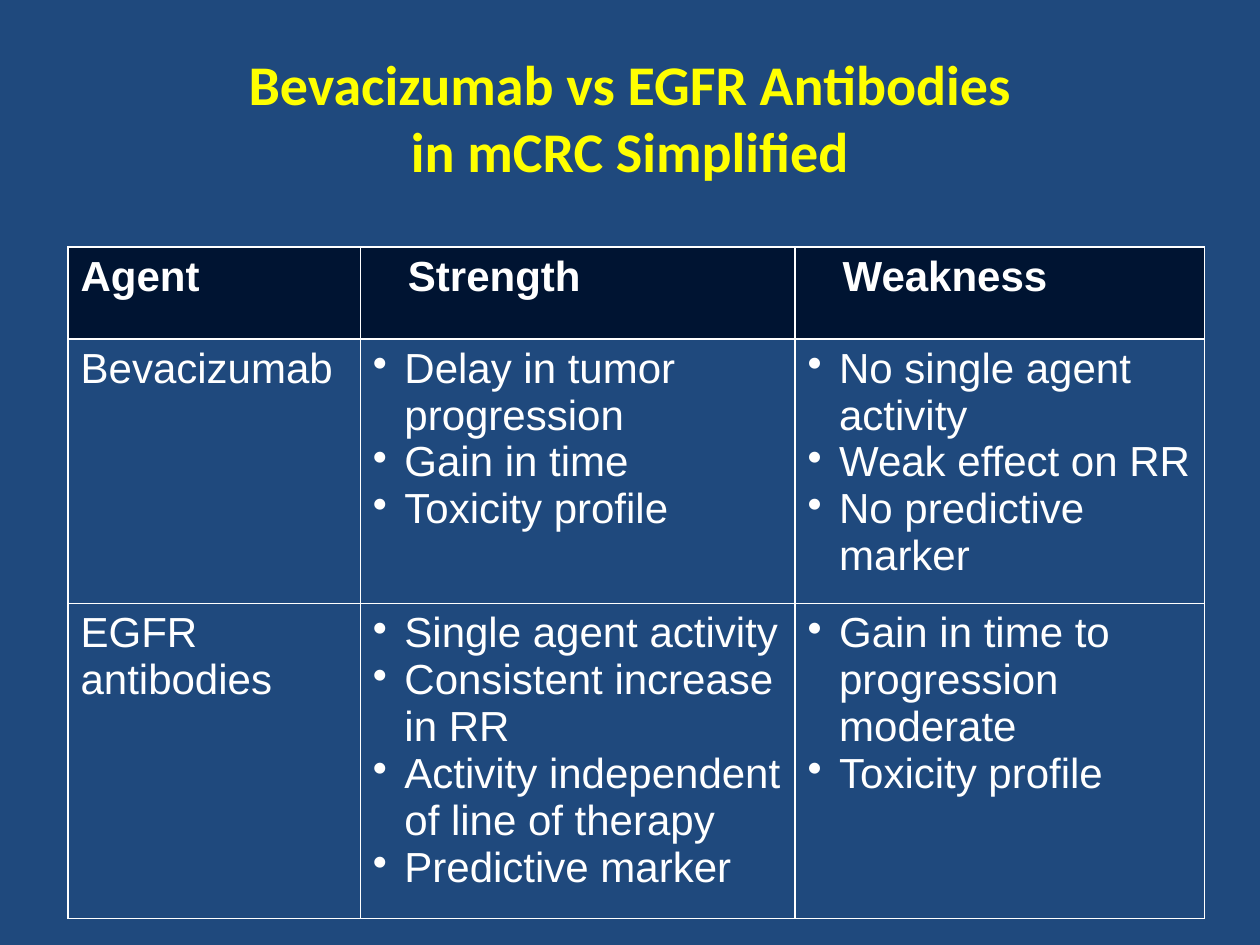
"""Build the slide that compares bevacizumab with EGFR antibodies."""
from dataclasses import dataclass

from lxml.etree import SubElement
from pptx import Presentation
from pptx.dml.color import RGBColor
from pptx.enum.text import MSO_ANCHOR, PP_ALIGN
from pptx.oxml.ns import qn
from pptx.util import Inches, Pt


@dataclass(frozen=True)
class Theme:
    """Colours, fonts and sizes of the deck."""
    back: str = "1F497D"
    head: str = "001432"
    title: str = "FFFF00"
    text: str = "FFFFFF"
    title_font: str = "Calibri"
    body_font: str = "Arial"
    title_size: int = 32
    body_size: int = 24
    rule: int = 1
    indent: float = 2.5
    head_indent: float = 2.78


class Page:
    """One slide on a grid of 100 columns by 75 rows."""

    def __init__(self, deck, theme):
        """Add a blank slide with the theme's background."""
        self.theme = theme
        self.unit = deck.slide_width / 100
        self.slide = deck.slides.add_slide(deck.slide_layouts[6])
        fill = self.slide.background.fill
        fill.solid()
        fill.fore_color.rgb = RGBColor.from_string(theme.back)

    def span(self, *cells):
        """Turn grid lengths into slide lengths."""
        return [round(n * self.unit) for n in cells]

    def style(self, para, font, size, color, bold):
        """Set the font of a paragraph."""
        para.font.name = font
        para.font.size = Pt(size)
        para.font.bold = bold
        para.font.color.rgb = RGBColor.from_string(color)

    def title(self, text, *box):
        """Add the centred title."""
        look = self.theme
        frame = self.slide.shapes.add_textbox(*self.span(*box)).text_frame
        frame.word_wrap = True
        frame.vertical_anchor = MSO_ANCHOR.MIDDLE
        para = frame.paragraphs[0]
        para.text = text
        para.alignment = PP_ALIGN.CENTER
        self.style(para, look.title_font, look.title_size, look.title, True)

    def indent(self, para, left, bullet=False):
        """Indent a paragraph, with a hanging bullet if asked."""
        props = para._p.get_or_add_pPr()
        width = self.span(left)[0]
        props.set("marL", str(width))
        if bullet:
            props.set("indent", str(-width))
            mark = props.makeelement(qn("a:buChar"), {"char": "•"})
            props.insert_element_before(mark, "a:tabLst", "a:defRPr", "a:extLst")

    def border(self, cell):
        """Draw a thin line on all four sides of a cell."""
        props = cell._tc.get_or_add_tcPr()
        for side in "LRTB":
            line = SubElement(props, qn(f"a:ln{side}"), w=str(Pt(self.theme.rule)))
            fill = SubElement(line, qn("a:solidFill"))
            SubElement(fill, qn("a:srgbClr"), val=self.theme.text)

    def cell(self, cell, text, head, first):
        """Fill in and style one table cell."""
        look = self.theme
        self.border(cell)
        if head:
            cell.fill.solid()
            cell.fill.fore_color.rgb = RGBColor.from_string(look.head)
        else:
            cell.fill.background()
        cell.text = text
        for para in cell.text_frame.paragraphs:
            if not first:
                width = look.head_indent if head else look.indent
                self.indent(para, width, bullet=not head)
            self.style(para, look.body_font, look.body_size, look.text, head)

    def table(self, left, top, cols, rows, data):
        """Add a table with a header row and bulleted cells."""
        box = self.span(left, top, sum(cols), sum(rows))
        grid = self.slide.shapes.add_table(len(rows), len(cols), *box).table
        grid.first_row = grid.horz_banding = False
        for col, width in zip(grid.columns, self.span(*cols)):
            col.width = width
        for row, high in zip(grid.rows, self.span(*rows)):
            row.height = high
        for r, line in enumerate(data):
            for c, text in enumerate(line):
                self.cell(grid.cell(r, c), text, head=r == 0, first=c == 0)


DATA = [
    ("Agent", "Strength", "Weakness"),
    (
        "Bevacizumab",
        "Delay in tumor progression\nGain in time\nToxicity profile",
        "No single agent activity\nWeak effect on RR\nNo predictive marker",
    ),
    (
        "EGFR antibodies",
        "Single agent activity\nConsistent increase in RR\n"
        "Activity independent of line of therapy\nPredictive marker",
        "Gain in time to progression moderate\nToxicity profile",
    ),
]


def main():
    """Build and save the deck."""
    deck = Presentation()
    deck.slide_width, deck.slide_height = Inches(10), Inches(7.5)
    page = Page(deck, Theme())
    page.title("Bevacizumab vs EGFR Antibodies\nin mCRC Simplified", 5, 3, 90, 12.5)
    page.table(5.4, 19.6, (23.2, 34.5, 32.5), (7.3, 21, 25), DATA)
    deck.save("out.pptx")


if __name__ == "__main__":
    main()
